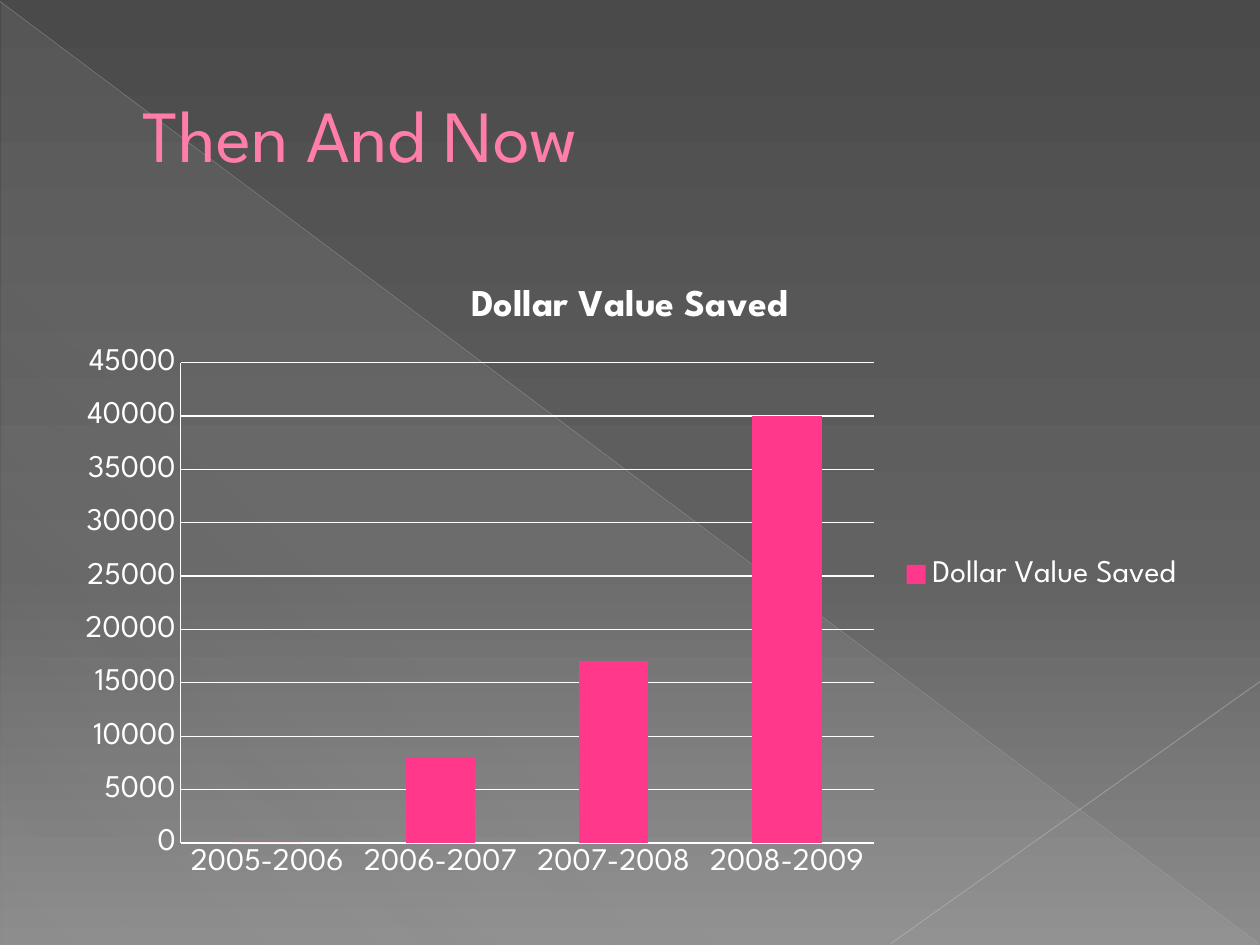
from dataclasses import dataclass

from lxml import etree
from pptx import Presentation
from pptx.chart.data import CategoryChartData
from pptx.dml.color import RGBColor
from pptx.enum.chart import XL_CHART_TYPE, XL_LEGEND_POSITION, XL_TICK_MARK
from pptx.enum.shapes import MSO_CONNECTOR, MSO_SHAPE
from pptx.enum.text import MSO_ANCHOR, PP_ALIGN
from pptx.oxml.ns import qn
from pptx.util import Cm, Pt

COLUMNS = XL_CHART_TYPE.COLUMN_CLUSTERED
LEGEND_RIGHT = XL_LEGEND_POSITION.RIGHT
NO_TICKS = XL_TICK_MARK.NONE
STRAIGHT = MSO_CONNECTOR.STRAIGHT
TRIANGLE = MSO_SHAPE.RIGHT_TRIANGLE
MIDDLE = MSO_ANCHOR.MIDDLE
LEFT = PP_ALIGN.LEFT

FONT = "League Spartan"
COLORS = {
    "top": "4A4A4A",
    "middle": "626262",
    "bottom": "8C8C8C",
    "sheen": "D2D2D2",
    "long_line": "BFBFBF",
    "short_line": "C6C6C6",
    "title": "FF7DA7",
    "outline": "B12761",
    "column": "FF388C",
    "text": "FFFFFF",
}
SERIES_NAME = "Dollar Value Saved"
SAVINGS = {"2005-2006": 0, "2006-2007": 8000, "2007-2008": 17000, "2008-2009": 40000}


@dataclass
class Stop:
    position: int
    color: str
    opacity: int = 100


@dataclass
class Diagonal:
    start: tuple[float, float]
    end: tuple[float, float]
    color: str
    width: float
    opacity: int


BACKGROUND_STOPS = [Stop(0, "top"), Stop(60, "middle"), Stop(100, "bottom")]
SHEEN_STOPS = [Stop(0, "sheen", 10), Stop(70, "sheen", 8), Stop(100, "sheen", 1)]
DIAGONALS = [
    Diagonal((0, 0.03), (25.37, 19.02), "long_line", 0.39, 35),
    Diagonal((25.4, 13.74), (17.96, 19.02), "short_line", 0.47, 45),
]


def rgb(name: str) -> RGBColor:
    return RGBColor.from_string(COLORS[name])


def add_opacity(color_element, percent: int) -> None:
    etree.SubElement(color_element, qn("a:alpha"), val=str(percent * 1000))


def set_gradient(fill, owner, stops: list[Stop], clockwise_angle: int) -> None:
    fill.gradient()
    fill.gradient_angle = 360 - clockwise_angle
    stop_list = next(owner.iter(qn("a:gsLst")))
    for old_stop in list(stop_list):
        stop_list.remove(old_stop)
    for stop in stops:
        element = etree.SubElement(stop_list, qn("a:gs"), pos=str(stop.position * 1000))
        color = etree.SubElement(element, qn("a:srgbClr"), val=COLORS[stop.color])
        if stop.opacity < 100:
            add_opacity(color, stop.opacity)


def add_diagonal(slide, diagonal: Diagonal) -> None:
    points = [Cm(value) for value in (*diagonal.start, *diagonal.end)]
    connector = slide.shapes.add_connector(STRAIGHT, *points)
    connector.line.color.rgb = rgb(diagonal.color)
    connector.line.width = Pt(diagonal.width)
    properties = connector.element.spPr
    add_opacity(next(properties.iter(qn("a:srgbClr"))), diagonal.opacity)
    etree.SubElement(properties, qn("a:effectLst"))


def add_backdrop(slide) -> None:
    set_gradient(slide.background.fill, slide.element, BACKGROUND_STOPS, 90)
    triangle = slide.shapes.add_shape(TRIANGLE, Cm(0.03), Cm(0.05), Cm(25.35), Cm(19))
    triangle.shadow.inherit = False
    triangle.line.fill.background()
    set_gradient(triangle.fill, triangle.element, SHEEN_STOPS, 133)
    for diagonal in DIAGONALS:
        add_diagonal(slide, diagonal)


def fill_title(slide, text: str) -> None:
    title = slide.shapes.title
    title.left, title.top, title.width, title.height = Cm(1.27), Cm(0.74), Cm(22.86), Cm(3.89)
    # Bring the title in front of the backdrop
    title.element.getparent().append(title.element)
    title.text_frame.vertical_anchor = MIDDLE
    paragraph = title.text_frame.paragraphs[0]
    paragraph.alignment = LEFT
    paragraph_properties = paragraph._p.get_or_add_pPr()
    paragraph_properties.set("marL", str(Cm(1.35)))
    paragraph_properties.set("indent", "0")
    run = paragraph.add_run()
    run.text = text
    run.font.name = FONT
    run.font.size = Pt(42)
    run.font.color.rgb = rgb("title")
    # Thin outline around the letters
    outline = etree.Element(qn("a:ln"), w=str(Pt(0.5)))
    outline_fill = etree.SubElement(outline, qn("a:solidFill"))
    etree.SubElement(outline_fill, qn("a:srgbClr"), val=COLORS["outline"])
    run._r.get_or_add_rPr().insert(0, outline)


def style_font(font, size: float, bold: bool) -> None:
    font.name = FONT
    font.size = Pt(size)
    font.bold = bold
    font.color.rgb = rgb("text")


def style_line(line) -> None:
    line.color.rgb = rgb("text")
    line.width = Pt(0.75)


def add_savings_chart(slide) -> None:
    data = CategoryChartData()
    data.categories = list(SAVINGS)
    data.add_series(SERIES_NAME, list(SAVINGS.values()))
    frame = slide.shapes.add_chart(COLUMNS, Cm(1.27), Cm(5.23), Cm(22.86), Cm(12.7), data)
    chart = frame.chart
    style_font(chart.font, 18, False)

    # Heading and legend
    chart.has_title = True
    chart.chart_title.include_in_layout = False
    heading = chart.chart_title.text_frame
    heading.text = SERIES_NAME
    style_font(heading.paragraphs[0].font, 21.6, True)
    chart.has_legend = True
    chart.legend.position = LEGEND_RIGHT
    chart.legend.include_in_layout = False

    # Axes and gridlines
    for axis in (chart.category_axis, chart.value_axis):
        axis.major_tick_mark = NO_TICKS
        axis.minor_tick_mark = NO_TICKS
        style_line(axis.format.line)
    value_axis = chart.value_axis
    value_axis.minimum_scale = 0
    value_axis.maximum_scale = 45000
    value_axis.major_unit = 5000
    value_axis.tick_labels.number_format = "General"
    value_axis.tick_labels.number_format_is_linked = False
    value_axis.has_major_gridlines = True
    style_line(value_axis.major_gridlines.format.line)

    # Columns
    plot = chart.plots[0]
    plot.vary_by_categories = False
    plot.gap_width = 150
    column_fill = plot.series[0].format.fill
    column_fill.solid()
    column_fill.fore_color.rgb = rgb("column")


def main() -> None:
    presentation = Presentation()
    presentation.slide_width, presentation.slide_height = Cm(25.4), Cm(19.05)
    slide = presentation.slides.add_slide(presentation.slide_layouts[5])
    add_backdrop(slide)
    fill_title(slide, "Then And Now")
    add_savings_chart(slide)
    presentation.save("out.pptx")


if __name__ == "__main__":
    main()
